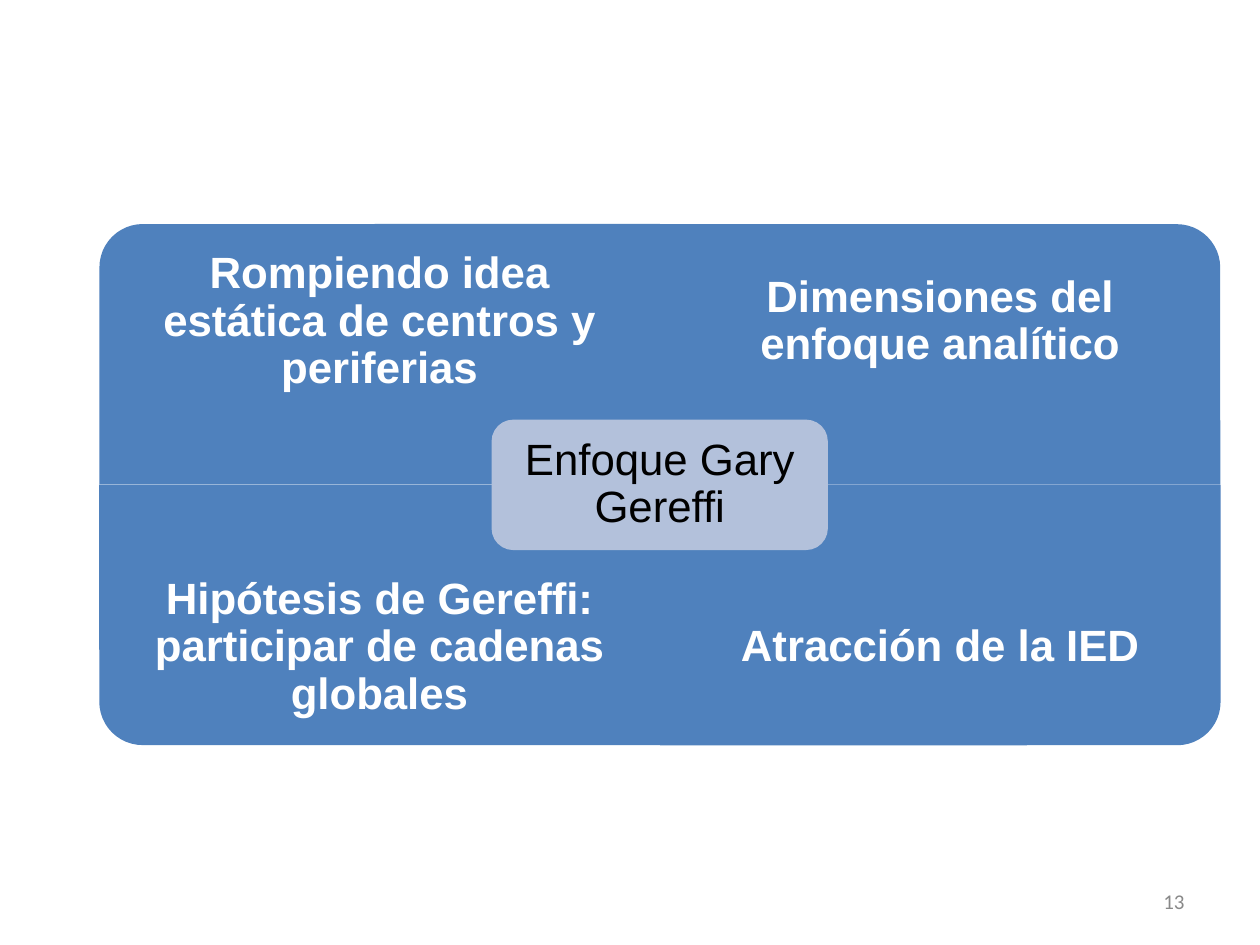
from dataclasses import dataclass

from pptx import Presentation
from pptx.dml.color import RGBColor as Rgb
from pptx.enum.shapes import MSO_SHAPE as Shape
from pptx.enum.text import MSO_ANCHOR as Anchor, PP_ALIGN as Align
from pptx.util import Cm, Pt


@dataclass(frozen=True)
class Theme:
    """Colours, fonts and type sizes of the slide."""
    blue: str = "4F81BD"
    pale: str = "B3C1DB"
    white: str = "FFFFFF"
    black: str = "000000"
    grey: str = "898989"
    main: str = "Arial"
    foot: str = "Calibri"
    large: int = 25
    small: int = 12


THEME = Theme()
QUADS = (
    ("Rompiendo idea estática de centros y periferias", 0, 0, 270),
    ("Dimensiones del enfoque analítico", 1, 0, 0),
    ("Hipótesis de Gereffi: participar de cadenas globales", 0, 1, 180),
    ("Atracción de la IED", 1, 1, 90),
)


def place(box):
    """Turn a box in centimetres into slide lengths."""
    return [Cm(round(side, 2)) for side in box]


def add_block(shapes, kind, box, fill):
    """Add a filled shape without line or shadow."""
    block = shapes.add_shape(kind, *place(box))
    block.shadow.inherit = False
    block.fill.solid()
    block.fill.fore_color.rgb = Rgb.from_string(fill)
    block.line.fill.background()
    return block


def write(shape, text, color, pad, size=THEME.large, face=THEME.main,
          bold=False, align=Align.CENTER, space=0.9):
    """Set one centred-height paragraph inside a shape."""
    frame = shape.text_frame
    wide, high = map(Cm, pad)
    form = dict(word_wrap=True, vertical_anchor=Anchor.MIDDLE,
                margin_left=wide, margin_right=wide,
                margin_top=high, margin_bottom=high)
    line = frame.paragraphs[0]
    run = line.add_run()
    run.text = text
    parts = (
        (frame, form),
        (line, dict(alignment=align, line_spacing=space)),
        (run.font, dict(name=face, size=Pt(size), bold=bold)),
    )
    for part, values in parts:
        for name, value in values.items():
            setattr(part, name, value)
    run.font.color.rgb = Rgb.from_string(color)


def add_quad(shapes, box, text, low, turn):
    """Add a quarter with its outer corner rounded and its label."""
    left, top, wide, high = box
    body = box
    if turn % 180:
        body = (left + (wide - high) / 2, top + (high - wide) / 2, high, wide)
    block = add_block(shapes, Shape.ROUND_1_RECTANGLE, body, THEME.blue)
    block.rotation = turn
    area = (left, top + low * high / 4, wide, high * 0.75)
    label = shapes.add_textbox(*place(area))
    write(label, text, THEME.white, (0.49, 0.49), bold=True)


def add_matrix(slide, box):
    """Add the four quarters and the core that overlaps them."""
    shapes = slide.shapes.add_group_shape().shapes
    left, top, wide, high = box
    half, mid = wide / 2, high / 2
    for text, col, row, turn in QUADS:
        cell = (left + col * half, top + row * mid, half, mid)
        add_quad(shapes, cell, text, row, turn)
    core = (left + wide * 0.35, top + high * 0.375, wide * 0.3, high / 4)
    block = add_block(shapes, Shape.ROUNDED_RECTANGLE, core, THEME.pale)
    write(block, "Enfoque Gary Gereffi", THEME.black, (0.25, 0.25))


def add_foot(slide, box):
    """Add the page number at the right."""
    label = slide.shapes.add_textbox(*place(box))
    write(label, "13", THEME.grey, (0.25, 0.13), THEME.small, THEME.foot,
          align=Align.RIGHT, space=1.0)


def main():
    """Build the slide and save it."""
    deck = Presentation()
    deck.slide_width, deck.slide_height = Cm(25.4), Cm(19.05)
    slide = deck.slides.add_slide(deck.slide_layouts[6])
    add_matrix(slide, (2, 4.52, 22.61, 10.51))
    add_foot(slide, (18.2, 17.66, 5.93, 1.01))
    deck.save("out.pptx")


if __name__ == "__main__":
    main()
